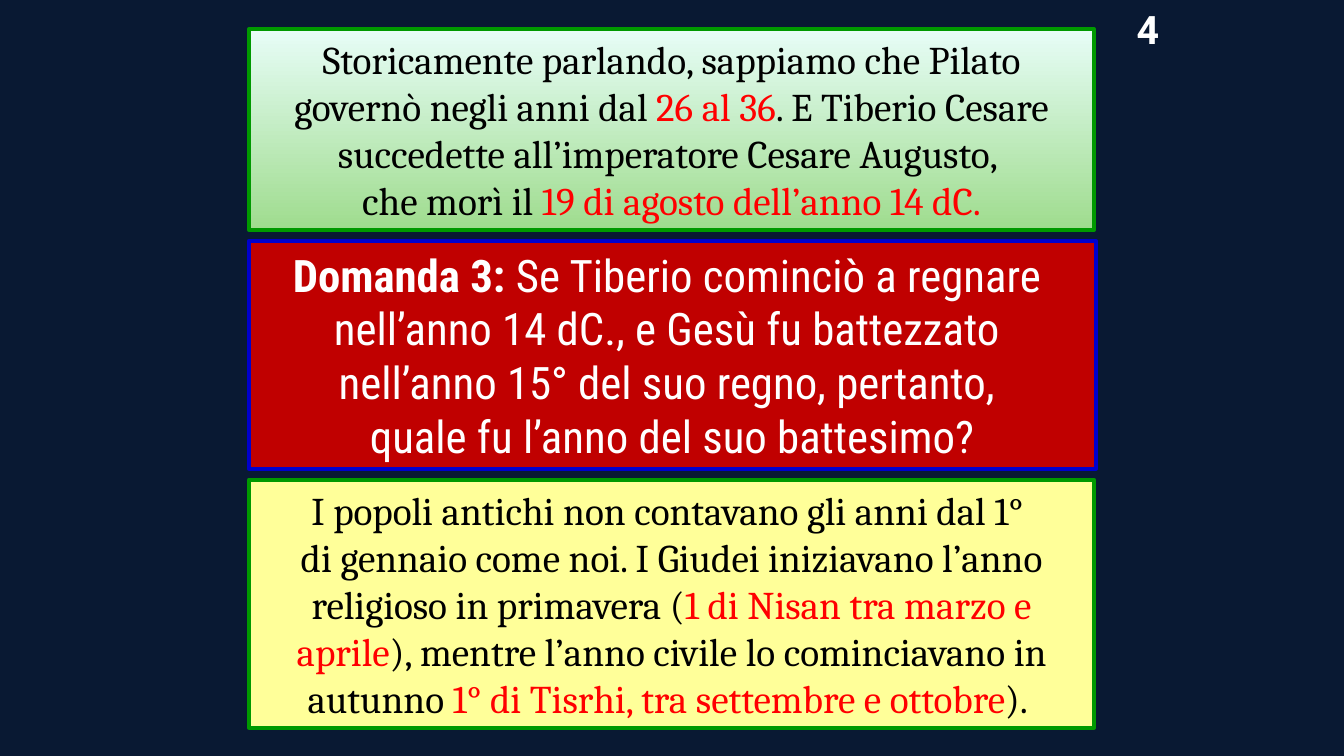
from pptx import Presentation
from pptx.dml.color import RGBColor
from pptx.enum.shapes import MSO_SHAPE
from pptx.enum.text import MSO_ANCHOR, PP_ALIGN
from pptx.util import Inches, Pt

BLACK, RED, WHITE = "000000", "FF0000", "FFFFFF"
HISTORY = [
    [("Storicamente parlando, sappiamo che Pilato governò negli anni dal ", BLACK),
     ("26 al 36", RED),
     (". E Tiberio Cesare succedette all’imperatore Cesare Augusto, ", BLACK)],
    [("che morì il ", BLACK), ("19 di agosto dell’anno 14 dC.", RED)],
]
QUESTION = [
    [("Domanda 3: ", WHITE, True), ("Se Tiberio cominciò a regnare ", WHITE)],
    [("nell’anno 14 dC., e Gesù fu battezzato ", WHITE)],
    [("nell’anno 15° del suo regno, pertanto, ", WHITE)],
    [("quale fu l’anno del suo battesimo?", WHITE)],
]
CALENDAR = [
    [("I popoli antichi non contavano gli anni dal 1° ", BLACK)],
    [("di gennaio come noi. I Giudei iniziavano l’anno religioso in primavera (", BLACK),
     ("1 di Nisan tra marzo e aprile", RED),
     ("), mentre l’anno civile lo cominciavano in autunno ", BLACK),
     ("1° di Tisrhi, tra settembre e ottobre", RED),
     ("). ", BLACK)],
]
PANELS = [
    (HISTORY, 8.38, 1.99, ("E7FDF7", "9FDC8E"), "009900", "Cambria", 28),
    (QUESTION, 8.4, 2.26, ("C00000",), "0000CC", "Roboto Condensed", 32),
    (CALENDAR, 8.38, 2.46, ("FFFF99",), "009900", "Cambria", 28),
]
LEFT, TOP, GAP = 2.47, 0.29, 0.11


def rgb(color):
    """Turn a hex string into a colour."""
    return RGBColor.from_string(color)


def write(tf, paragraphs, font, size):
    """Fill a text frame with centred paragraphs of coloured runs."""
    for i, runs in enumerate(paragraphs):
        p = tf.add_paragraph() if i else tf.paragraphs[0]
        p.alignment = PP_ALIGN.CENTER
        p.font.name, p.font.size = font, Pt(size)
        for text, color, *bold in runs:
            r = p.add_run()
            r.text = text
            r.font.color.rgb = rgb(color)
            r.font.bold = bool(bold)


def paint(fill, colors):
    """Fill with one colour, or with a gradient from top to bottom."""
    if len(colors) == 1:
        fill.solid()
        fill.fore_color.rgb = rgb(colors[0])
        return
    fill.gradient()
    fill.gradient_angle = 270
    for position, (stop, color) in enumerate(zip(fill.gradient_stops, colors)):
        stop.position = position
        stop.color.rgb = rgb(color)


def main():
    """Build the slide and save it."""
    prs = Presentation()
    prs.slide_width, prs.slide_height = Inches(13.33), Inches(7.5)
    s = prs.slides.add_slide(prs.slide_layouts[6])
    paint(s.background.fill, ("091933",))

    top = TOP
    for paragraphs, width, height, colors, border, font, size in PANELS:
        sp = s.shapes.add_shape(MSO_SHAPE.RECTANGLE, Inches(LEFT), Inches(top),
                                Inches(width), Inches(height))
        sp.shadow.inherit = False
        paint(sp.fill, colors)
        sp.line.color.rgb = rgb(border)
        sp.line.width = Pt(3)
        tf = sp.text_frame
        tf.word_wrap = True
        tf.vertical_anchor = MSO_ANCHOR.MIDDLE
        write(tf, paragraphs, font, size)
        top += height + GAP

    number = s.shapes.add_textbox(Inches(11.16), 0, Inches(0.45), Inches(0.57))
    number.text_frame.word_wrap = False
    write(number.text_frame, [[("4", WHITE, True)]], "Roboto", 28)
    prs.save("out.pptx")


if __name__ == "__main__":
    main()
